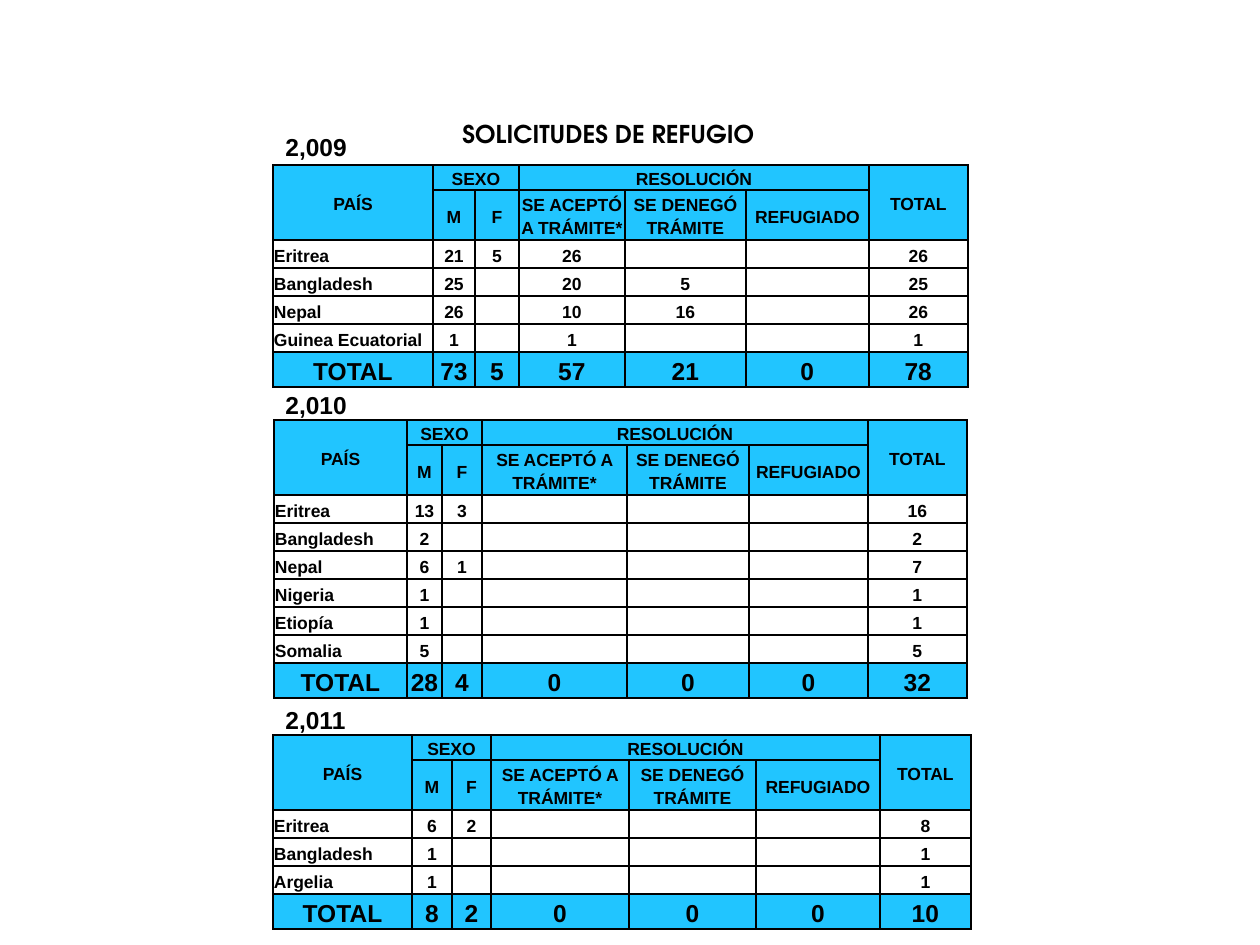
from lxml.etree import SubElement
from pptx import Presentation
from pptx.dml.color import RGBColor
from pptx.enum.text import MSO_ANCHOR, MSO_AUTO_SIZE, PP_ALIGN
from pptx.oxml.ns import qn
from pptx.util import Emu, Pt

COLORS = {"header": "21C5FF", "ink": "000000"}
PX = 914400 // 126
HEADER_HEIGHTS, COUNTRY_HEIGHT, TOTAL_HEIGHT = [25, 50], 28, 35
GROUPS = ["PAÍS", "SEXO", "", "RESOLUCIÓN", "", "", "TOTAL"]
SUBHEADS = ["", "M", "F", "SE ACEPTÓ A TRÁMITE*", "SE DENEGÓ TRÁMITE", "REFUGIADO", ""]
MERGES = [(0, 0, 1, 0), (0, 1, 0, 2), (0, 3, 0, 5), (0, 6, 1, 6)]

REQUESTS_2009 = [
    ["Eritrea", "21", "5", "26", "", "", "26"],
    ["Bangladesh", "25", "", "20", "5", "", "25"],
    ["Nepal", "26", "", "10", "16", "", "26"],
    ["Guinea Ecuatorial", "1", "", "1", "", "", "1"],
    ["TOTAL", "73", "5", "57", "21", "0", "78"],
]
REQUESTS_2010 = [
    ["Eritrea", "13", "3", "", "", "", "16"],
    ["Bangladesh", "2", "", "", "", "", "2"],
    ["Nepal", "6", "1", "", "", "", "7"],
    ["Nigeria", "1", "", "", "", "", "1"],
    ["Etiopía", "1", "", "", "", "", "1"],
    ["Somalia", "5", "", "", "", "", "5"],
    ["TOTAL", "28", "4", "0", "0", "0", "32"],
]
REQUESTS_2011 = [
    ["Eritrea", "6", "2", "", "", "", "8"],
    ["Bangladesh", "1", "", "", "", "", "1"],
    ["Argelia", "1", "", "", "", "", "1"],
    ["TOTAL", "8", "2", "0", "0", "0", "10"],
]


class RefugeSlide:
    def __init__(self, slide):
        self.slide = slide

    def style_text(self, paragraph, size, font="Arial"):
        for run in paragraph.runs:
            run.font.name = font
            run.font.size = Pt(size)
            run.font.bold = True
            run.font.color.rgb = RGBColor.from_string(COLORS["ink"])

    def text(self, box, lines, gaps, font="Arial", wrap=True):
        frame = self.slide.shapes.add_textbox(*(Emu(n * PX) for n in box)).text_frame
        frame.word_wrap = wrap
        frame.auto_size = MSO_AUTO_SIZE.NONE if wrap else MSO_AUTO_SIZE.SHAPE_TO_FIT_TEXT
        frame.vertical_anchor = MSO_ANCHOR.MIDDLE if wrap else MSO_ANCHOR.TOP
        frame.text = "\n".join(lines)
        for paragraph, gap in zip(frame.paragraphs, gaps):
            if gap:
                paragraph.space_before = Pt(gap)
            self.style_text(paragraph, 14, font)

    def borders(self, cell):
        properties = cell._tc.get_or_add_tcPr()
        for index, side in enumerate(("a:lnL", "a:lnR", "a:lnT", "a:lnB")):
            line = SubElement(properties, qn(side), w=str(Pt(1)))
            fill = SubElement(line, qn("a:solidFill"))
            SubElement(fill, qn("a:srgbClr"), val=COLORS["ink"])
            properties.insert(index, line)

    def cell(self, cell, words, size, align, filled):
        cell.margin_left = cell.margin_right = cell.margin_top = Emu(PX)
        cell.margin_bottom = 0
        cell.vertical_anchor = MSO_ANCHOR.MIDDLE
        if filled:
            cell.fill.solid()
            cell.fill.fore_color.rgb = RGBColor.from_string(COLORS["header"])
        else:
            cell.fill.background()
        self.borders(cell)
        cell.text = words
        paragraph = cell.text_frame.paragraphs[0]
        paragraph.alignment = align
        paragraph.line_spacing = 1.15
        self.style_text(paragraph, size)
        if not words:
            SubElement(paragraph._p, qn("a:endParaRPr"), sz=str(size * 100))

    def requests(self, left, top, widths, records, country_align=PP_ALIGN.LEFT):
        rows = [GROUPS, SUBHEADS, *records]
        heights = [*HEADER_HEIGHTS, *[COUNTRY_HEIGHT] * (len(records) - 1), TOTAL_HEIGHT]
        frame = (left, top, sum(widths), sum(heights))
        table = self.slide.shapes.add_table(
            len(rows), len(widths), *(Emu(n * PX) for n in frame)).table
        table.first_row = table.horz_banding = False
        for column, width in zip(table.columns, widths):
            column.width = Emu(width * PX)
        for r, (row, height) in enumerate(zip(rows, heights)):
            table.rows[r].height = Emu(height * PX)
            is_total = r == len(rows) - 1
            filled = r < 2 or is_total
            for c, words in enumerate(row):
                align = PP_ALIGN.CENTER if c or filled else country_align
                self.cell(table.cell(r, c), words, 14 if is_total else 10, align, filled)
        for top_row, first, bottom_row, last in MERGES:
            table.cell(top_row, first).merge(table.cell(bottom_row, last))


def main():
    presentation = Presentation()
    presentation.slide_width = Emu(1260 * PX)
    presentation.slide_height = Emu(945 * PX)
    page = RefugeSlide(presentation.slides.add_slide(presentation.slide_layouts[6]))
    page.text((450, 113, 359, 43), ["SOLICITUDES DE REFUGIO"], [0], "TeX Gyre Adventor", False)
    page.requests(273, 165, [160, 42, 44, 106, 121, 123, 99], REQUESTS_2009, PP_ALIGN.JUSTIFY)
    page.requests(274, 420, [133, 35, 40, 145, 122, 119, 99], REQUESTS_2010)
    page.requests(273, 735, [139, 40, 39, 138, 127, 124, 91], REQUESTS_2011)
    page.text((273, 115, 147, 636), ["2,009", "2,010", "2,011"], [0, 131, 163])
    presentation.save("out.pptx")


if __name__ == "__main__":
    main()
